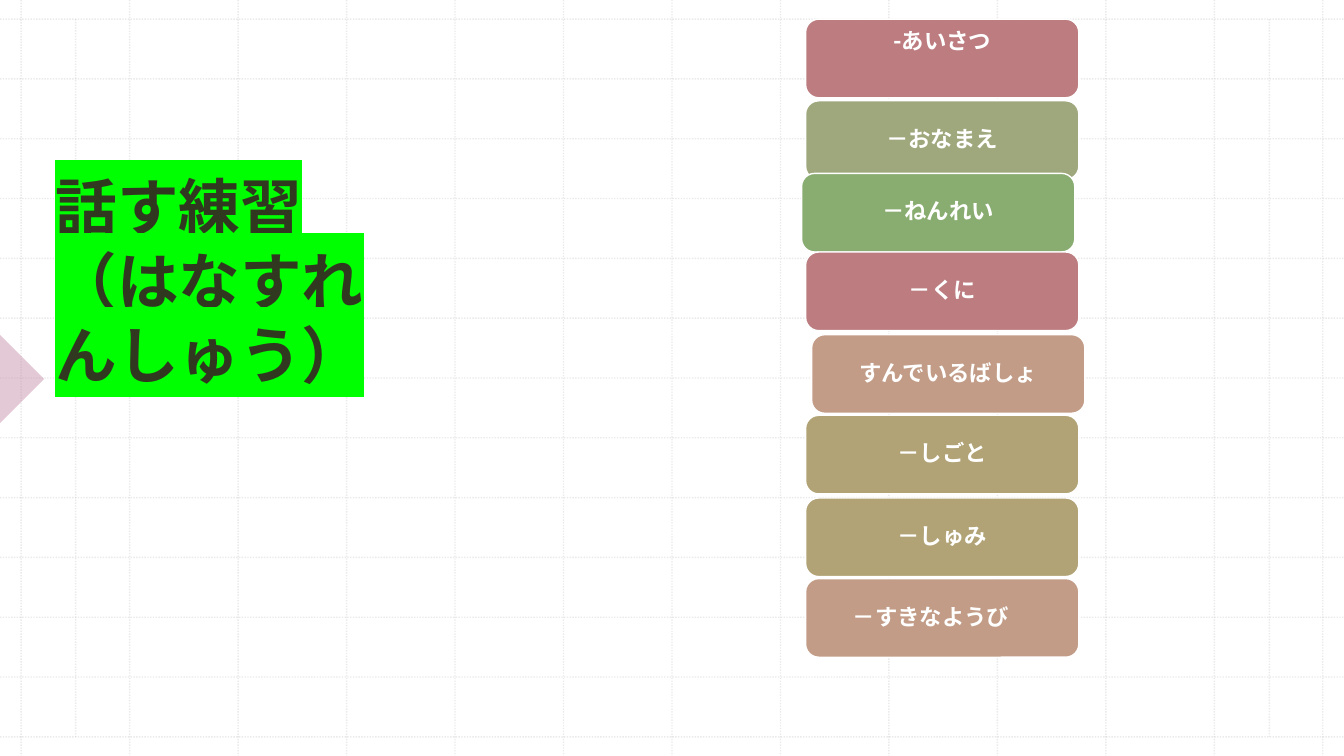
import pptx
import pptx.dml.color
import pptx.enum.dml
import pptx.enum.lang
import pptx.enum.shapes
import pptx.enum.text
import pptx.oxml
import pptx.oxml.ns
import pptx.util

Inches = pptx.util.Inches
Pt = pptx.util.Pt
SHAPE = pptx.enum.shapes.MSO_SHAPE
ANCHOR = pptx.enum.text.MSO_ANCHOR
ALIGN = pptx.enum.text.PP_ALIGN
WIDTH, HEIGHT = 13.33, 7.5
GRID_STEPS = 12

# Topic, fill, left and top offset in the column, extra frame settings
TOPICS = [
    ("-あいさつ", "BC7C80", 0.04, 0,
     {"vertical_anchor": ANCHOR.TOP, "margin_top": Inches(0.07)}),
    ("－おなまえ", "9FA87C", 0.04, 0.81, {}),
    ("－ねんれい", "89AC71", 0, 1.53, {}),
    ("－くに", "BC7C80", 0.04, 2.31, {}),
    ("すんでいるばしょ", "C29C87", 0.1, 3.13, {}),
    ("－しごと", "B1A375", 0.04, 3.93, {}),
    ("－しゅみ", "B1A375", 0.04, 4.75, {}),
    ("－すきなようび", "C29C87", 0.04, 5.55, {"margin_right": Inches(0.33)}),
]


def color(value):
    return pptx.dml.color.RGBColor.from_string(value)


def apply(target, formats):
    for name, value in formats.items():
        setattr(target, name, value)


def xml(tag, content=""):
    namespace = pptx.oxml.ns.nsdecls("a")
    return pptx.oxml.parse_xml(f"<a:{tag} {namespace}>{content}</a:{tag}>")


def find_fill(element):
    return element.find(".//" + pptx.oxml.ns.qn("a:solidFill"))


def set_opacity(solid_fill, percent):
    alpha = xml("alpha")
    alpha.set("val", str(percent * 1000))
    solid_fill[0].append(alpha)


def write(frame, text, frame_formats, para_formats, size, text_color):
    apply(frame, frame_formats)
    para = frame.paragraphs[0]
    apply(para, para_formats)
    span = para.add_run()
    span.text = text
    apply(span.font, {
        "name": "Roboto", "size": Pt(size), "bold": True,
        "language_id": pptx.enum.lang.MSO_LANGUAGE_ID.JAPANESE})
    span.font.color.rgb = color(text_color)


def add_grid_line(page, left, top, right, bottom):
    line = page.shapes.add_connector(
        pptx.enum.shapes.MSO_CONNECTOR.STRAIGHT,
        *map(Inches, (left, top, right, bottom)))
    line.line.color.rgb = color("BCBCBC")
    apply(line.line, {"width": Pt(1),
                      "dash_style": pptx.enum.dml.MSO_LINE.ROUND_DOT})
    properties = line.element.spPr
    set_opacity(find_fill(properties), 30)
    properties.append(xml("effectLst"))


def add_background(page, left, top, width, height):
    right, bottom = left + width, top + height
    first_x, last_x = left + 0.21, right - 0.21
    first_y, last_y = top + 0.19, bottom - 0.19
    # Dotted grid
    for step in range(GRID_STEPS + 1):
        x = first_x + step * (last_x - first_x) / GRID_STEPS
        y = first_y + step * (last_y - first_y) / GRID_STEPS
        add_grid_line(page, x, top, x, bottom)
        add_grid_line(page, left, y, right, y)
    # Inner margin lines
    for x in (left + 0.75, right - 0.74):
        add_grid_line(page, x, first_y, x, last_y)
    # Pointer on the left edge
    pointer = page.shapes.add_shape(
        SHAPE.RIGHT_TRIANGLE,
        *map(Inches, (left - 0.31, top + 3.45, 0.62, 0.62)))
    pointer.rotation = 225
    pointer.shadow.inherit = False
    pointer.line.fill.background()
    pointer.fill.solid()
    pointer.fill.fore_color.rgb = color("C894AD")
    set_opacity(find_fill(pointer.element.spPr), 50)


def add_title(page, left, top, width, height):
    title = page.shapes.title
    apply(title, {"left": Inches(left), "top": Inches(top),
                  "width": Inches(width), "height": Inches(height)})
    write(title.text_frame, "話す練習（はなすれんしゅう）",
          {"word_wrap": True, "vertical_anchor": ANCHOR.MIDDLE,
           "auto_size": pptx.enum.text.MSO_AUTO_SIZE.NONE,
           "margin_bottom": Inches(0.8)},
          {"alignment": ALIGN.LEFT, "line_spacing": 1.0}, 44, "313820")
    # Green highlight
    find_fill(title.element).addnext(
        xml("highlight", '<a:srgbClr val="00FF00"/>'))
    # Bring the title in front of the grid
    title.element.getparent().append(title.element)


def add_topics(page, left, top, width, height):
    for text, fill, offset_x, offset_y, extra in TOPICS:
        card = page.shapes.add_shape(
            SHAPE.ROUNDED_RECTANGLE,
            *map(Inches, (left + offset_x, top + offset_y, width, height)))
        card.shadow.inherit = False
        card.fill.solid()
        card.fill.fore_color.rgb = color(fill)
        card.line.color.rgb = color("FFFFFF")
        card.line.width = Pt(1)
        frame_formats = {
            "word_wrap": True, "vertical_anchor": ANCHOR.MIDDLE,
            "margin_left": Inches(0.11), "margin_right": Inches(0.11),
            "margin_top": Inches(0.07), "margin_bottom": Inches(0.07)}
        write(card.text_frame, text, frame_formats | extra,
              {"alignment": ALIGN.CENTER, "line_spacing": 0.9}, 16, "FFFFFF")


def main():
    deck = pptx.Presentation()
    apply(deck, {"slide_width": Inches(WIDTH), "slide_height": Inches(HEIGHT)})
    page = deck.slides.add_slide(deck.slide_layouts.get_by_name("Title Only"))
    add_background(page, 0, 0, WIDTH, HEIGHT)
    add_title(page, 0.45, 0.18, 3.75, 5.95)
    add_topics(page, 7.95, 0.19, 2.71, 0.78)
    deck.save("out.pptx")


if __name__ == "__main__":
    main()
